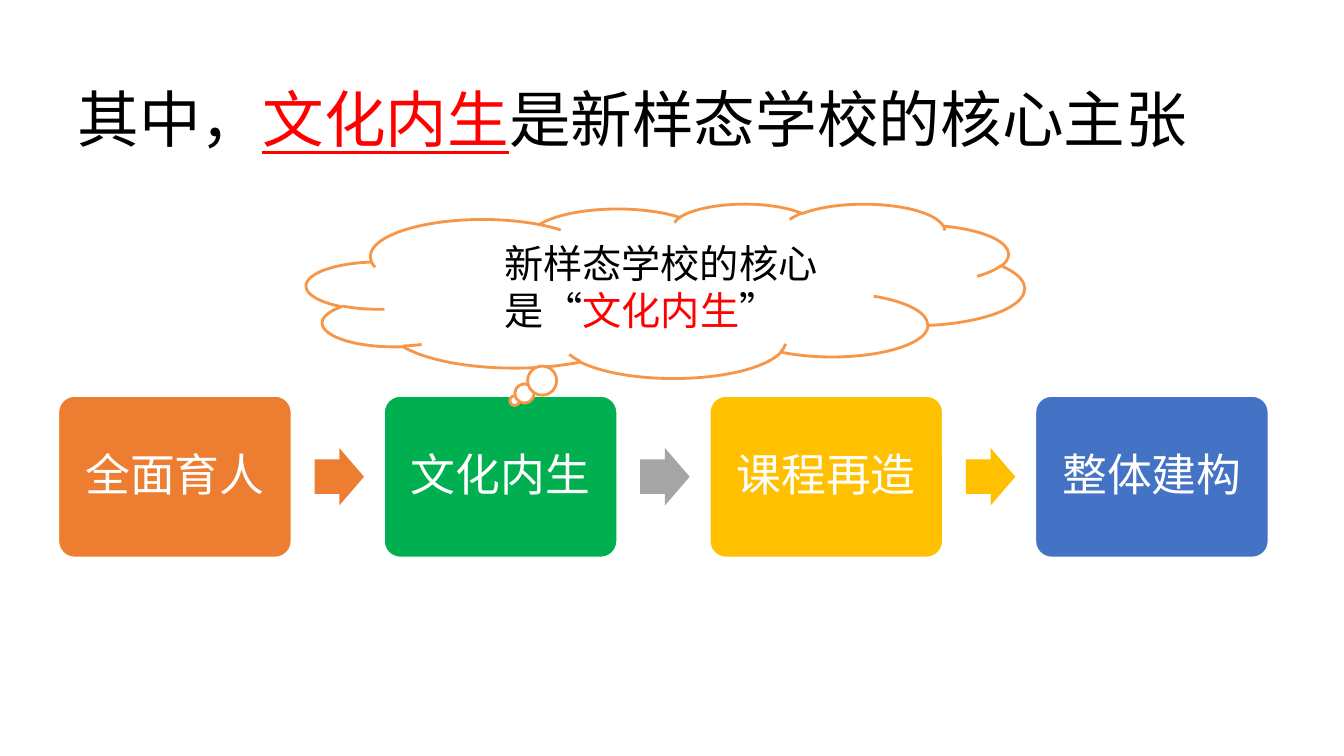
import pptx
import pptx.dml.color
import pptx.enum.shapes
import pptx.enum.text
import pptx.util

Inches = pptx.util.Inches
SHAPES = pptx.enum.shapes.MSO_SHAPE
ALIGN = pptx.enum.text.PP_ALIGN

STEPS = [("全面育人", "ED7D31", "ED7D31"), ("文化内生", "00B050", "A5A5A5"),
         ("课程再造", "FFC000", "FFC000"), ("整体建构", "4472C4", None)]


def color(value):
    """Turn a hex string into a colour."""
    return pptx.dml.color.RGBColor.from_string(value)


def add_shape(page, kind, box, adjustments, fill, line=None, width=1):
    """Add a preset shape with its adjustments, fill and line."""
    shape = page.shapes.add_shape(kind, *map(Inches, box))
    for index, value in enumerate(adjustments):
        shape.adjustments[index] = value
    shape.shadow.inherit = False
    shape.fill.solid()
    shape.fill.fore_color.rgb = color(fill)
    if line:
        shape.line.color.rgb = color(line)
        shape.line.width = pptx.util.Pt(width)
    else:
        shape.line.fill.background()
    return shape


def write(shape, spans, size, align=ALIGN.LEFT, spacing=1.0, left=0.1, right=0.1):
    """Write (text, colour, underline) spans as one paragraph in a shape."""
    frame = shape.text_frame
    frame.word_wrap = True
    frame.vertical_anchor = pptx.enum.text.MSO_ANCHOR.MIDDLE
    frame.margin_left, frame.margin_right = Inches(left), Inches(right)
    para = frame.paragraphs[0]
    para.alignment, para.line_spacing = align, spacing
    for text, shade, underline in spans:
        span = para.add_run()
        span.text = text
        span.font.name = "Calibri"
        span.font.size = pptx.util.Pt(size)
        span.font.color.rgb = color(shade)
        span.font.underline = underline


def add_title(page, left, top, width, height):
    """Add the heading with its underlined key words."""
    box = page.shapes.add_textbox(*map(Inches, (left, top, width, height)))
    write(box, [("其中，", "000000", False), ("文化内生", "FF0000", True),
                ("是新样态学校的核心主张", "000000", False)], 44, spacing=0.9)


def add_steps(page, left, top, width, height):
    """Add the row of step cards with arrows between them."""
    card_width, arrow_width, arrow_height = 2.31, 0.49, 0.57
    pitch = (width - card_width) / (len(STEPS) - 1)
    for index, (label, fill, arrow_fill) in enumerate(STEPS):
        x = left + index * pitch
        card = add_shape(page, SHAPES.ROUNDED_RECTANGLE, (x, top, card_width, height),
                         [0.1], fill, "FFFFFF")
        write(card, [(label, "FFFFFF", False)], 32, ALIGN.CENTER, 0.9, 0.13, 0.13)
        if arrow_fill:
            arrow_top = top + (height - arrow_height) / 2
            add_shape(page, SHAPES.RIGHT_ARROW,
                      (x + card_width + 0.23, arrow_top, arrow_width, arrow_height),
                      [0.6, 0.5], arrow_fill)


def add_thought_cloud(page, left, top, width, height):
    """Add the thought cloud that points at the second card."""
    cloud = add_shape(page, SHAPES.CLOUD_CALLOUT, (left, top, width, height),
                      [-0.21, 0.63], "FFFFFF", "F79646", 2)
    write(cloud, [("新样态学校的核心是“", "000000", False), ("文化内生", "FF0000", False),
                  ("”", "000000", False)], 28, left=0.98, right=0.37)


def main():
    """Build the deck and save it."""
    deck = pptx.Presentation()
    deck.slide_width, deck.slide_height = Inches(13.33), Inches(7.5)
    page = deck.slides.add_slide(deck.slide_layouts[6])
    add_title(page, 0.67, 0.59, 12, 1.26)
    add_steps(page, 0.58, 3.93, 12, 1.6)
    add_thought_cloud(page, 3.04, 2.02, 7.12, 1.73)
    deck.save("out.pptx")


if __name__ == "__main__":
    main()
